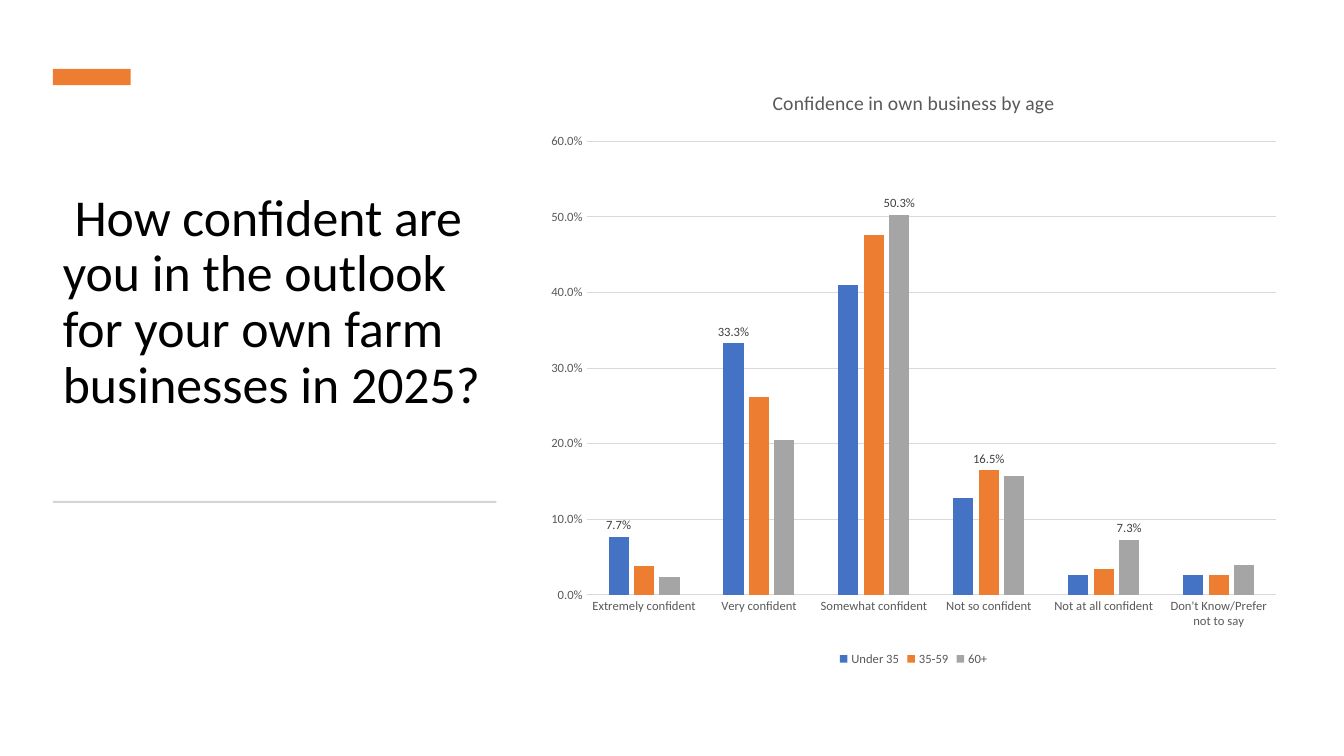
from dataclasses import dataclass

import pptx
import pptx.chart.data
import pptx.dml.color
import pptx.enum.chart
import pptx.enum.shapes
import pptx.enum.text
import pptx.util

Pt = pptx.util.Pt
chart_enum = pptx.enum.chart


@dataclass(frozen=True)
class Theme:
    font: str = "Calibri"
    question: str = "000000"
    accent: str = "ED7D31"
    rule: str = "D5D5D5"
    grid: str = "D9D9D9"
    muted: str = "595959"
    value: str = "404040"
    question_size: float = 37
    title_size: float = 14
    small_size: float = 9


theme = Theme()


def color(code):
    return pptx.dml.color.RGBColor.from_string(code)


def style_font(font, size, code):
    for name, value in {"name": theme.font, "size": Pt(size), "bold": False}.items():
        setattr(font, name, value)
    font.color.rgb = color(code)


deck = pptx.Presentation()
deck.slide_width, deck.slide_height = Pt(960), Pt(540)
page = deck.slides.add_slide(deck.slide_layouts[6])

# Question
question_box = page.shapes.add_textbox(Pt(37.8), Pt(88.6), Pt(316.8), Pt(252))
frame = question_box.text_frame
frame_format = {
    "word_wrap": True,
    "vertical_anchor": pptx.enum.text.MSO_ANCHOR.BOTTOM,
    "margin_bottom": Pt(44.2),
}
for name, value in frame_format.items():
    setattr(frame, name, value)
para = frame.paragraphs[0]
para.line_spacing = 0.9
para._p.get_or_add_pPr().set("indent", str(Pt(8.4)))
span = para.add_run()
span.text = "How confident are you in the outlook for your own farm businesses in 2025?"
style_font(span.font, theme.question_size, theme.question)

# Accent bar above the question and rule below it
for left, top, width, height, fill in (
    (37.8, 49.3, 55.6, 11.5, theme.accent),
    (37.8, 357.8, 316.8, 1.44, theme.rule),
):
    bar = page.shapes.add_shape(
        pptx.enum.shapes.MSO_SHAPE.RECTANGLE, Pt(left), Pt(top), Pt(width), Pt(height)
    )
    bar.shadow.inherit = False
    bar.fill.solid()
    bar.fill.fore_color.rgb = color(fill)
    bar.line.fill.background()

# Confidence by age: name, values, colour, indexes of labelled bars
age_groups = (
    ("Under 35", (0.077, 0.333, 0.410, 0.128, 0.026, 0.026), "4472C4", (0, 1)),
    ("35-59", (0.038, 0.262, 0.476, 0.165, 0.034, 0.026), "ED7D31", (3,)),
    ("60+", (0.023, 0.205, 0.503, 0.157, 0.073, 0.039), "A5A5A5", (2, 4)),
)
data = pptx.chart.data.CategoryChartData(number_format="0.0%")
data.categories = (
    "Extremely confident",
    "Very confident",
    "Somewhat confident",
    "Not so confident",
    "Not at all confident",
    "Don't Know/Prefer not to say",
)
for name, values, fill, labelled in age_groups:
    data.add_series(name, values)

chart = page.shapes.add_chart(
    chart_enum.XL_CHART_TYPE.COLUMN_CLUSTERED,
    Pt(383), Pt(49), Pt(539.3), Pt(429.8), data,
).chart
style_font(chart.font, theme.small_size, theme.muted)

chart.has_title = True
title_para = chart.chart_title.text_frame.paragraphs[0]
title_span = title_para.add_run()
title_span.text = "Confidence in own business by age"
style_font(title_span.font, theme.title_size, theme.muted)
chart.chart_title.include_in_layout = False

chart.has_legend = True
chart.legend.position = chart_enum.XL_LEGEND_POSITION.BOTTOM
chart.legend.include_in_layout = False
style_font(chart.legend.font, theme.small_size, theme.muted)

plot = chart.plots[0]
for name, value in {"gap_width": 219, "overlap": -27, "vary_by_categories": False}.items():
    setattr(plot, name, value)

for series, (name, values, fill, labelled) in zip(plot.series, age_groups):
    series.format.fill.solid()
    series.format.fill.fore_color.rgb = color(fill)
    series.invert_if_negative = False
    series.data_labels.show_value = False
    for index in labelled:
        label = series.points[index].data_label
        label.position = chart_enum.XL_LABEL_POSITION.OUTSIDE_END
        style_font(label.font, theme.small_size, theme.value)

for axis in (chart.category_axis, chart.value_axis):
    axis.major_tick_mark = chart_enum.XL_TICK_MARK.NONE
    axis.minor_tick_mark = chart_enum.XL_TICK_MARK.NONE
    style_font(axis.tick_labels.font, theme.small_size, theme.muted)

value_axis = chart.value_axis
value_axis.minimum_scale, value_axis.maximum_scale, value_axis.major_unit = 0, 0.6, 0.1
value_axis.has_major_gridlines = True
value_axis.tick_labels.number_format = "0.0%"
value_axis.tick_labels.number_format_is_linked = False
value_axis.format.line.fill.background()
for line in (chart.category_axis.format.line, value_axis.major_gridlines.format.line):
    line.width = Pt(0.75)
    line.color.rgb = color(theme.grid)

deck.save("out.pptx")
